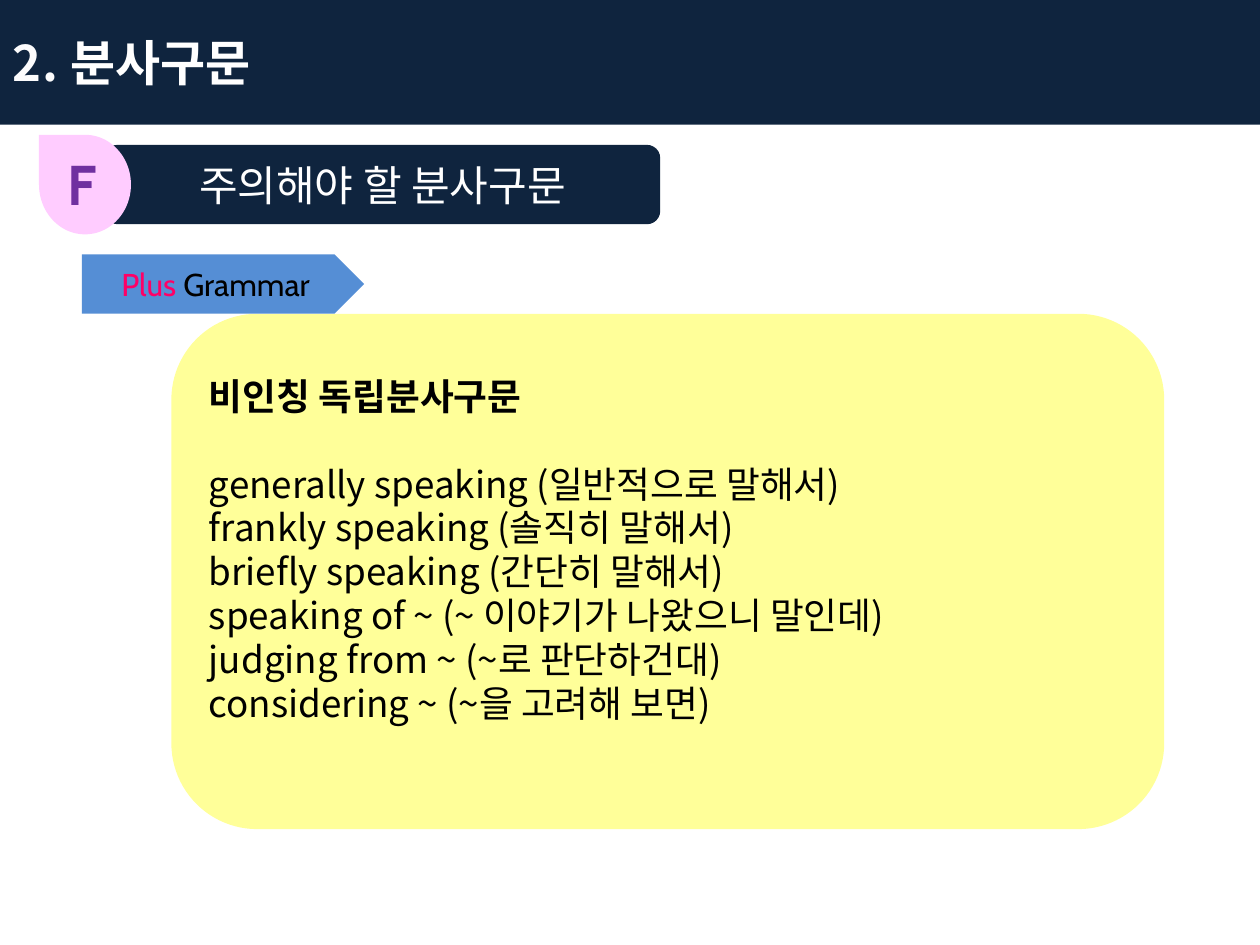
from dataclasses import dataclass
from typing import Optional

from lxml import etree
from pptx import Presentation
from pptx.dml.color import RGBColor
from pptx.enum.shapes import MSO_SHAPE
from pptx.enum.text import MSO_ANCHOR, PP_ALIGN
from pptx.oxml.ns import qn
from pptx.util import Emu, Inches, Pt

RECT = MSO_SHAPE.RECTANGLE
ROUNDED = MSO_SHAPE.FLOWCHART_ALTERNATE_PROCESS
PENTAGON = MSO_SHAPE.PENTAGON
TEAR = MSO_SHAPE.TEAR
MIDDLE = MSO_ANCHOR.MIDDLE
TOP = MSO_ANCHOR.TOP
LEFT = PP_ALIGN.LEFT
CENTER = PP_ALIGN.CENTER

SLIDE_WIDTH, SLIDE_HEIGHT = Inches(10), Inches(7.5)
COLUMNS, ROWS = 100, 75


@dataclass(frozen=True)
class Theme:
    navy: str = "0F243E"
    yellow: str = "FFFF99"
    blue: str = "558ED5"
    pink: str = "FFCCFF"
    purple: str = "7030A0"
    rose: str = "FF0066"
    white: str = "FFFFFF"
    off_white: str = "FCFCFD"
    black: str = "000000"
    korean: str = "Noto Sans CJK KR"
    latin: str = "Cabin"
    title: float = 28
    section: float = 24
    label: float = 18
    letter: float = 32
    body: float = 21
    body_line: float = 25.1


THEME = Theme()


@dataclass(frozen=True)
class Area:
    column: float
    row: float
    columns: float
    rows: float

    def lengths(self) -> tuple[Emu, Emu, Emu, Emu]:
        cell_width, cell_height = SLIDE_WIDTH / COLUMNS, SLIDE_HEIGHT / ROWS
        return (
            Emu(round(self.column * cell_width)),
            Emu(round(self.row * cell_height)),
            Emu(round(self.columns * cell_width)),
            Emu(round(self.rows * cell_height)),
        )


@dataclass(frozen=True)
class Words:
    text: str
    size: float
    color: str
    font: str = THEME.korean
    bold: bool = False
    tracking: int = 0


@dataclass(frozen=True)
class Line:
    words: tuple[Words, ...]
    align: PP_ALIGN = LEFT
    pitch: Optional[float] = None
    before: float = 0


@dataclass(frozen=True)
class Panel:
    kind: MSO_SHAPE
    area: Area
    fill: str
    lines: tuple[Line, ...] = ()
    rotation: float = 0
    bottom_inset: float = 0.05


def add_words(paragraph, words: Words) -> None:
    run = paragraph.add_run()
    run.text = words.text
    font = run.font
    font.size = Pt(words.size)
    font.bold = words.bold
    font.color.rgb = RGBColor.from_string(words.color)
    font.name = words.font
    properties = run._r.get_or_add_rPr()
    etree.SubElement(properties, qn("a:ea")).set("typeface", words.font)
    if words.tracking:
        properties.set("spc", str(words.tracking))


def write_lines(frame, lines: tuple[Line, ...], anchor: MSO_ANCHOR) -> None:
    frame.vertical_anchor = anchor
    for index, line in enumerate(lines):
        paragraph = frame.add_paragraph() if index else frame.paragraphs[0]
        paragraph.alignment = line.align
        if line.pitch:
            paragraph.line_spacing = Pt(line.pitch)
        if line.before:
            paragraph.space_before = Pt(line.before)
        for words in line.words:
            add_words(paragraph, words)


def draw_panel(slide, panel: Panel) -> None:
    shape = slide.shapes.add_shape(panel.kind, *panel.area.lengths())
    shape.shadow.inherit = False
    shape.fill.solid()
    shape.fill.fore_color.rgb = RGBColor.from_string(panel.fill)
    shape.line.fill.background()
    shape.rotation = panel.rotation
    shape.text_frame.word_wrap = True
    shape.text_frame.margin_bottom = Inches(panel.bottom_inset)
    write_lines(shape.text_frame, panel.lines, MIDDLE)


def draw_letter(slide, area: Area, letter: Words) -> None:
    box = slide.shapes.add_textbox(*area.lengths())
    write_lines(box.text_frame, (Line((letter,)),), TOP)


def body_line(text: str, bold: bool = False, before: float = 0) -> Line:
    words = Words(text, THEME.body, THEME.black, bold=bold)
    return Line((words,), pitch=THEME.body_line, before=before)


PHRASES = (
    "generally speaking (일반적으로 말해서)",
    "frankly speaking (솔직히 말해서)",
    "briefly speaking (간단히 말해서)",
    "speaking of ~ (~ 이야기가 나왔으니 말인데)",
    "judging from ~ (~로 판단하건대)",
    "considering ~ (~을 고려해 보면)",
)
PHRASE_LINES = tuple(
    body_line(phrase, before=0 if index else THEME.body_line)
    for index, phrase in enumerate(PHRASES)
)

PANELS = (
    Panel(RECT, Area(0, 0, 100, 9.9), THEME.navy, (Line((
        Words("2. ", THEME.title, THEME.off_white, bold=True, tracking=50),
        Words("분사구문", THEME.title, THEME.white, bold=True),
    )),)),
    Panel(ROUNDED, Area(13.6, 24.9, 78.8, 40.9), THEME.yellow,
          (body_line("비인칭 독립분사구문", bold=True), *PHRASE_LINES),
          bottom_inset=0.4),
    Panel(PENTAGON, Area(6.5, 20.2, 22.4, 4.7), THEME.blue, (Line((
        Words("Plus ", THEME.label, THEME.rose, THEME.latin),
        Words("Grammar", THEME.label, THEME.black, THEME.latin),
    ), CENTER),)),
    Panel(ROUNDED, Area(8.3, 11.5, 44.1, 6.3), THEME.navy, (Line((
        Words("주의해야 할 분사구문", THEME.section, THEME.white),
    ), CENTER),)),
    Panel(TEAR, Area(2.8, 11, 7.9, 7.3), THEME.pink, rotation=270),
)
SECTION_LETTER = Words("F", THEME.letter, THEME.purple, THEME.latin, bold=True)


def main() -> None:
    deck = Presentation()
    deck.slide_width, deck.slide_height = SLIDE_WIDTH, SLIDE_HEIGHT
    slide = deck.slides.add_slide(deck.slide_layouts[6])
    for panel in PANELS:
        draw_panel(slide, panel)
    draw_letter(slide, Area(4.4, 11.4, 4.7, 6.4), SECTION_LETTER)
    deck.save("out.pptx")


if __name__ == "__main__":
    main()
